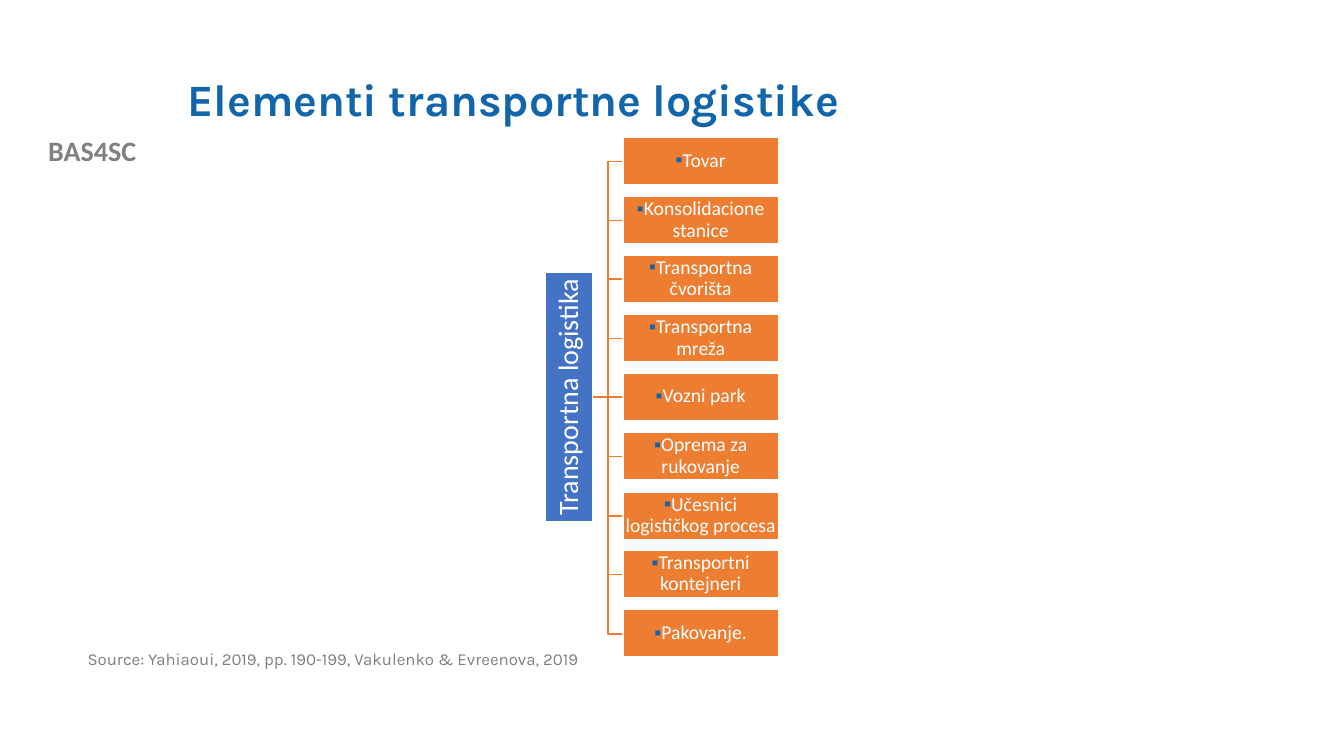
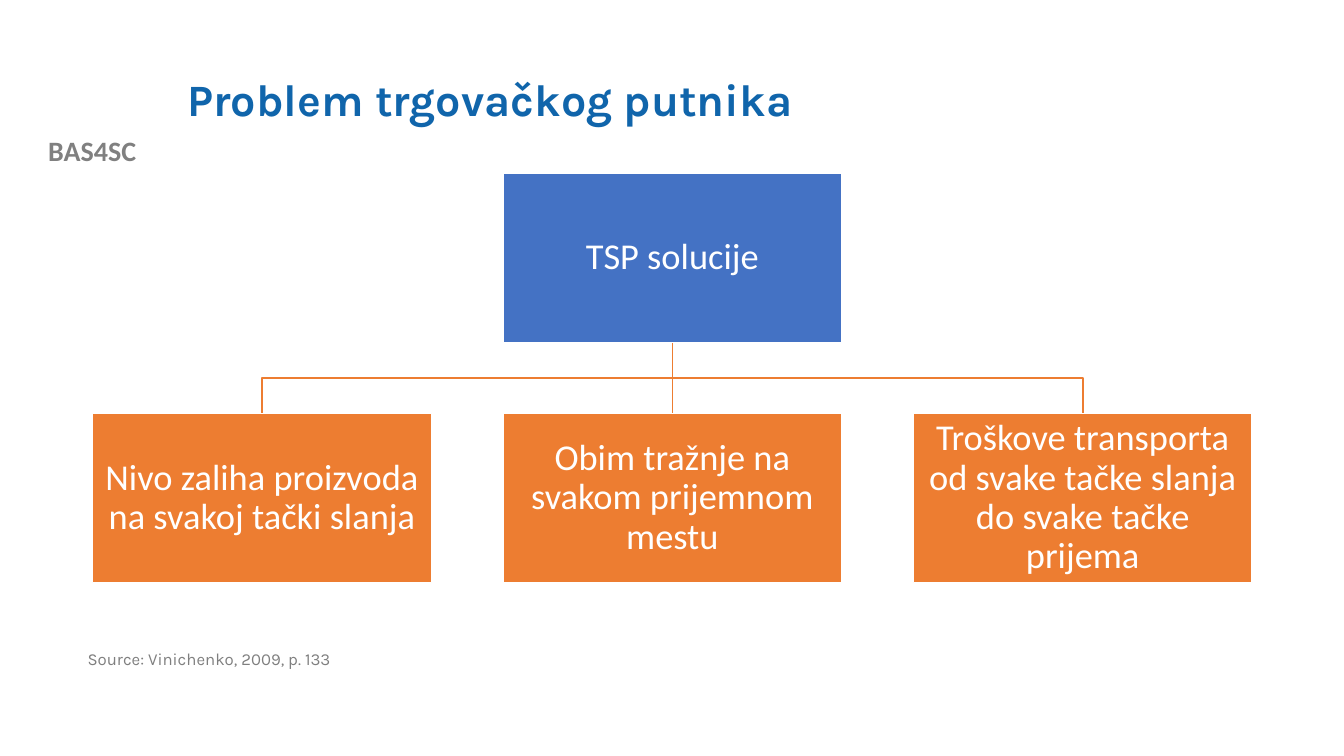
from dataclasses import dataclass

from lxml import etree
from pptx import Presentation
from pptx.dml.color import RGBColor
from pptx.enum.shapes import MSO_CONNECTOR, MSO_SHAPE
from pptx.enum.text import MSO_ANCHOR, PP_ALIGN
from pptx.oxml.ns import qn
from pptx.util import Pt

PX = 9144  # EMU per px, 100 px to the inch
LEFT, CENTER = PP_ALIGN.LEFT, PP_ALIGN.CENTER
TOP, MIDDLE = MSO_ANCHOR.TOP, MSO_ANCHOR.MIDDLE
RECTANGLE, STRAIGHT = MSO_SHAPE.RECTANGLE, MSO_CONNECTOR.STRAIGHT


@dataclass(frozen=True)
class Theme:
    title: str = "1065AB"
    label: str = "808080"
    source: str = "7F7F7F"
    root: str = "4472C4"
    leaf: str = "ED7D31"
    white: str = "FFFFFF"
    heading_font: str = "Karla"
    body_font: str = "Calibri"
    title_size: int = 32
    label_size: int = 20
    source_size: int = 12
    line_width: int = 1


THEME = Theme()


def px(value):
    return round(value * PX)


def color(code):
    return RGBColor.from_string(code)


def spread(start, span, size, count):
    """Start positions of equal items that fill the span with equal gaps."""
    step = (span - size) / (count - 1)
    return [round(start + step * index) for index in range(count)]


# Text and shapes
def write(shape, text, font, size, code, bold=False, align=LEFT,
          anchor=TOP, spacing=0.9, inset=None, bullet=False):
    frame = shape.text_frame
    frame.text = text
    frame.word_wrap = True
    frame.vertical_anchor = anchor
    if inset is not None:
        frame.margin_left = frame.margin_right = px(inset)
        frame.margin_top = frame.margin_bottom = px(inset)
    para = frame.paragraphs[0]
    para.alignment = align
    para.line_spacing = spacing
    if bullet:
        add_bullet(para)
    span = para.runs[0]
    span.font.name = font
    span.font.size = Pt(size)
    span.font.bold = bold
    span.font.color.rgb = color(code)


def add_bullet(para):
    props = para._p.get_or_add_pPr()
    props.set("marL", "0")
    props.set("indent", "0")
    tint = etree.SubElement(props, qn("a:buClr"))
    etree.SubElement(tint, qn("a:srgbClr"), val=THEME.title)
    etree.SubElement(props, qn("a:buFont"), typeface="Arial")
    etree.SubElement(props, qn("a:buChar"), char="▪")


def add_text(page, box, text, font, size, code, **style):
    shape = page.shapes.add_textbox(*map(px, box))
    write(shape, text, font, size, code, **style)


def add_node(page, box, text, fill, size, inset, bullet=False, rotation=0):
    node = page.shapes.add_shape(RECTANGLE, *map(px, box))
    node.shadow.inherit = False
    node.rotation = rotation
    node.fill.solid()
    node.fill.fore_color.rgb = color(fill)
    node.line.color.rgb = color(THEME.white)
    node.line.width = Pt(THEME.line_width)
    write(node, text, THEME.body_font, size, THEME.white, align=CENTER,
          anchor=MIDDLE, inset=inset, bullet=bullet)


def add_branch(page, start, end, bends):
    """Join two points: straight when they line up, else through the bends."""
    if start[0] == end[0] or start[1] == end[1]:
        branch = page.shapes.add_connector(STRAIGHT, *map(px, start + end))
        etree.SubElement(branch._element.spPr, qn("a:effectLst"))
    else:
        builder = page.shapes.build_freeform(*start, scale=PX)
        builder.add_line_segments([*bends, end], close=False)
        branch = builder.convert_to_shape()
        branch.fill.background()
        branch.shadow.inherit = False
    branch.line.color.rgb = color(THEME.leaf)
    branch.line.width = Pt(THEME.line_width)


# Parts shared by the slides
def add_page(deck, title, source):
    page = deck.slides.add_slide(deck.slide_layouts[6])
    add_text(page, (0, 128, 183, 44), "BAS4SC", THEME.body_font,
             THEME.label_size, THEME.label, bold=True, align=CENTER, spacing=1)
    add_text(page, (176, 40, 1066, 122), title, THEME.heading_font,
             THEME.title_size, THEME.title, bold=True, anchor=MIDDLE)
    add_text(page, (77, 641, 560, 52), source, THEME.heading_font,
             THEME.source_size, THEME.source)
    return page


# Tree growing to the right from an upright root
def add_side_tree(page, box, root, leaves):
    left, top, width, height = box
    bar, root_length, leaf_width = 47, 247, 154
    middle = top + height // 2
    leaf_left = left + width - leaf_width
    trunk = (left + bar + leaf_left) // 2
    tops = spread(top, height, bar, len(leaves))
    for leaf_top in tops:
        level = leaf_top + bar // 2 + 1
        add_branch(page, (left + bar, middle), (leaf_left, level),
                   [(trunk, middle), (trunk, level)])
    root_box = (left + (bar - root_length) / 2, middle - bar / 2,
                root_length, bar)
    add_node(page, root_box, root, THEME.root, 20, 1, rotation=270)
    for leaf_top, text in zip(tops, leaves):
        add_node(page, (leaf_left, leaf_top, leaf_width, bar), text,
                 THEME.leaf, 14, 1, bullet=True)


# Tree growing downwards from a centred root
def add_down_tree(page, box, root, leaves):
    left, top, width, height = box
    node_width, node_height = 336, 168
    middle = left + width // 2
    root_bottom, leaf_top = top + node_height, top + height - node_height
    trunk = (root_bottom + leaf_top) // 2
    lefts = spread(left, width, node_width, len(leaves))
    for leaf_left in lefts:
        center = leaf_left + node_width // 2
        add_branch(page, (middle, root_bottom), (center, leaf_top),
                   [(middle, trunk), (center, trunk)])
    add_node(page, (middle - node_width // 2, top, node_width, node_height),
             root, THEME.root, 26, 2)
    for leaf_left, text in zip(lefts, leaves):
        add_node(page, (leaf_left, leaf_top, node_width, node_height), text,
                 THEME.leaf, 26, 2)


def main():
    deck = Presentation()
    deck.slide_width, deck.slide_height = px(1333), px(750)

    page = add_page(
        deck, "Elementi transportne logistike",
        "Source: Yahiaoui, 2019, pp. 190-199, Vakulenko & Evreenova, 2019")
    add_side_tree(page, (541, 136, 231, 516), "Transportna logistika", [
        "Tovar", "Konsolidacione stanice", "Transportna čvorišta",
        "Transportna mreža", "Vozni park", "Oprema za rukovanje",
        "Učesnici logističkog procesa", "Transportni kontejneri",
        "Pakovanje."])

    page = add_page(deck, "Problem trgovačkog putnika",
                    "Source: Vinichenko, 2009, p. 133")
    add_down_tree(page, (92, 172, 1150, 406), "TSP solucije", [
        "Nivo zaliha proizvoda na svakoj tački slanja",
        "Obim tražnje na svakom prijemnom mestu",
        "Troškove transporta od svake tačke slanja do svake tačke prijema"])

    deck.save("out.pptx")


if __name__ == "__main__":
    main()
